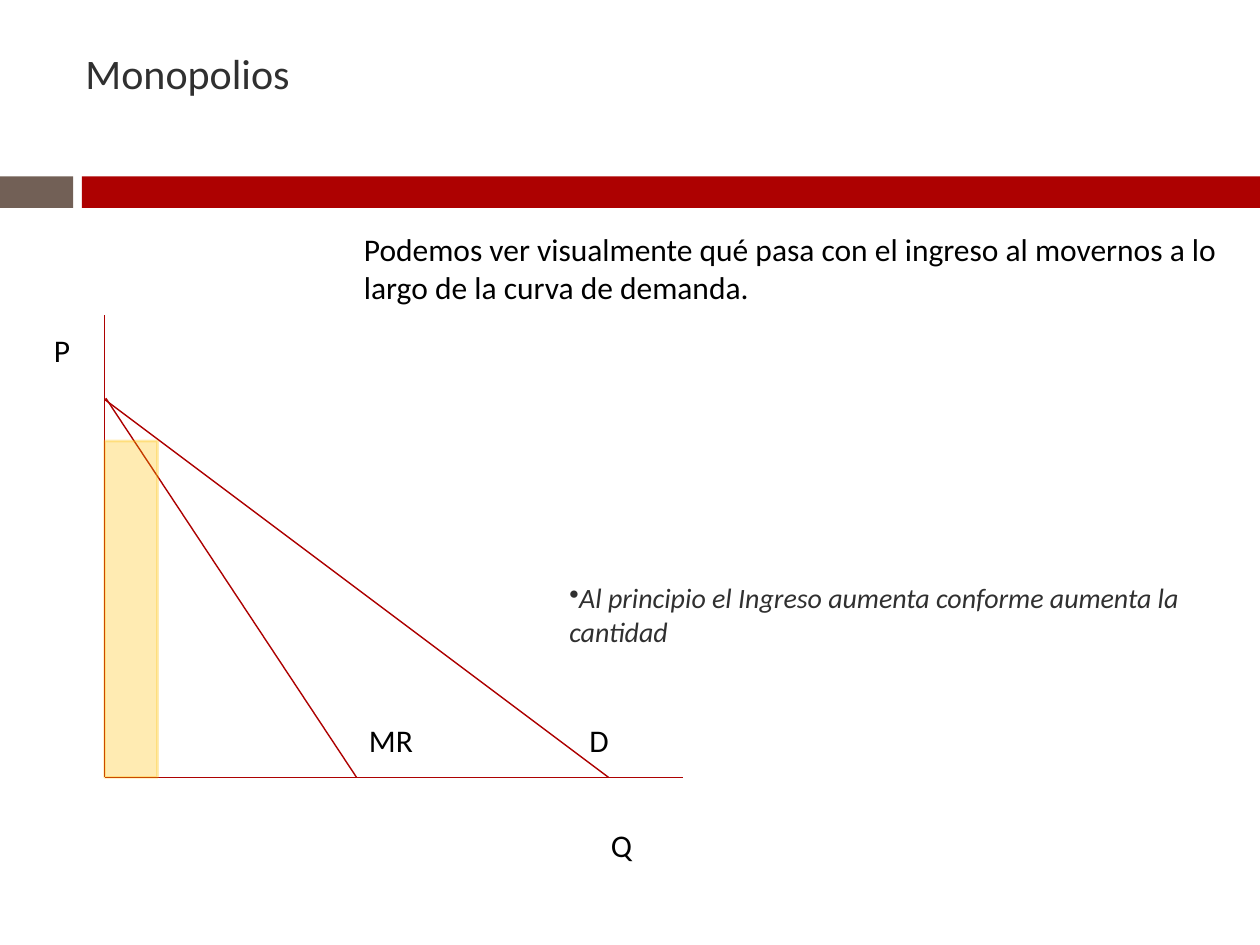
from lxml import etree
from pptx import Presentation
from pptx.dml.color import RGBColor
from pptx.enum.shapes import MSO_CONNECTOR, MSO_SHAPE
from pptx.oxml.ns import qn
from pptx.util import Inches, Pt

RED, DARK, BLACK, AMBER = "AD0101", "303030", "000000", "FFC000"


def color(value):
    return RGBColor.from_string(value)


deck = Presentation()
deck.slide_width, deck.slide_height = Inches(10), Inches(7.5)
page = deck.slides.add_slide(deck.slide_layouts[6])

# Header band
for left, width, fill in [(0, 0.58, "726056"), (0.65, 9.35, RED)]:
    band = page.shapes.add_shape(
        MSO_SHAPE.RECTANGLE, Inches(left), Inches(1.4), Inches(width), Inches(0.25))
    band.shadow.inherit = False
    band.fill.solid()
    band.fill.fore_color.rgb = color(fill)
    band.line.fill.background()

# Axes, demand and marginal revenue
lines = [
    (0.83, 2.5, 0.83, 6.17),
    (0.83, 6.17, 5.42, 6.17),
    (0.83, 3.17, 4.83, 6.17),
    (0.84, 3.16, 2.83, 6.17),
]
for ends in lines:
    line = page.shapes.add_connector(MSO_CONNECTOR.STRAIGHT, *map(Inches, ends))
    line.line.color.rgb = color(RED)
    line.line.width = Pt(0.79)
    etree.SubElement(line._element.spPr, qn("a:effectLst"))

# Title, labels and remarks
texts = [
    ("Monopolios", 0.58, 0.33, 6, 0.5, 24, DARK),
    ("Q", 4.75, 6.51, 0.33, 0.4, 18, BLACK),
    ("P", 0.33, 2.58, 0.33, 0.4, 18, BLACK),
    ("MR", 2.83, 5.67, 0.58, 0.4, 18, BLACK),
    ("D", 4.58, 5.67, 0.58, 0.4, 18, BLACK),
    ("Podemos ver visualmente qué pasa con el ingreso al movernos a lo largo "
     "de la curva de demanda.", 2.79, 1.78, 7.17, 0.71, 18, BLACK),
    ("Al principio el Ingreso aumenta conforme aumenta la cantidad",
     4.42, 4.56, 5.25, 0.64, 16, DARK),
]
for words, left, top, width, height, size, ink in texts:
    box = page.shapes.add_textbox(
        Inches(left), Inches(top), Inches(width), Inches(height))
    box.text_frame.word_wrap = True
    para = box.text_frame.paragraphs[0]
    span = para.add_run()
    span.text = words
    span.font.name = "Calibri"
    span.font.size = Pt(size)
    span.font.color.rgb = color(ink)

# The last remark is an italic bullet
span.font.italic = True
etree.SubElement(para._p.get_or_add_pPr(), qn("a:buChar"), char="•")

# Revenue area, 30% opaque
revenue = page.shapes.add_shape(
    MSO_SHAPE.RECTANGLE, Inches(0.83), Inches(3.5), Inches(0.42), Inches(2.67))
revenue.shadow.inherit = False
revenue.fill.solid()
revenue.fill.fore_color.rgb = color(AMBER)
revenue.line.color.rgb = color(AMBER)
revenue.line.width = Pt(1.5)
for tint in revenue._element.spPr.iter(qn("a:srgbClr")):
    etree.SubElement(tint, qn("a:alpha"), val="30000")

deck.save("out.pptx")
